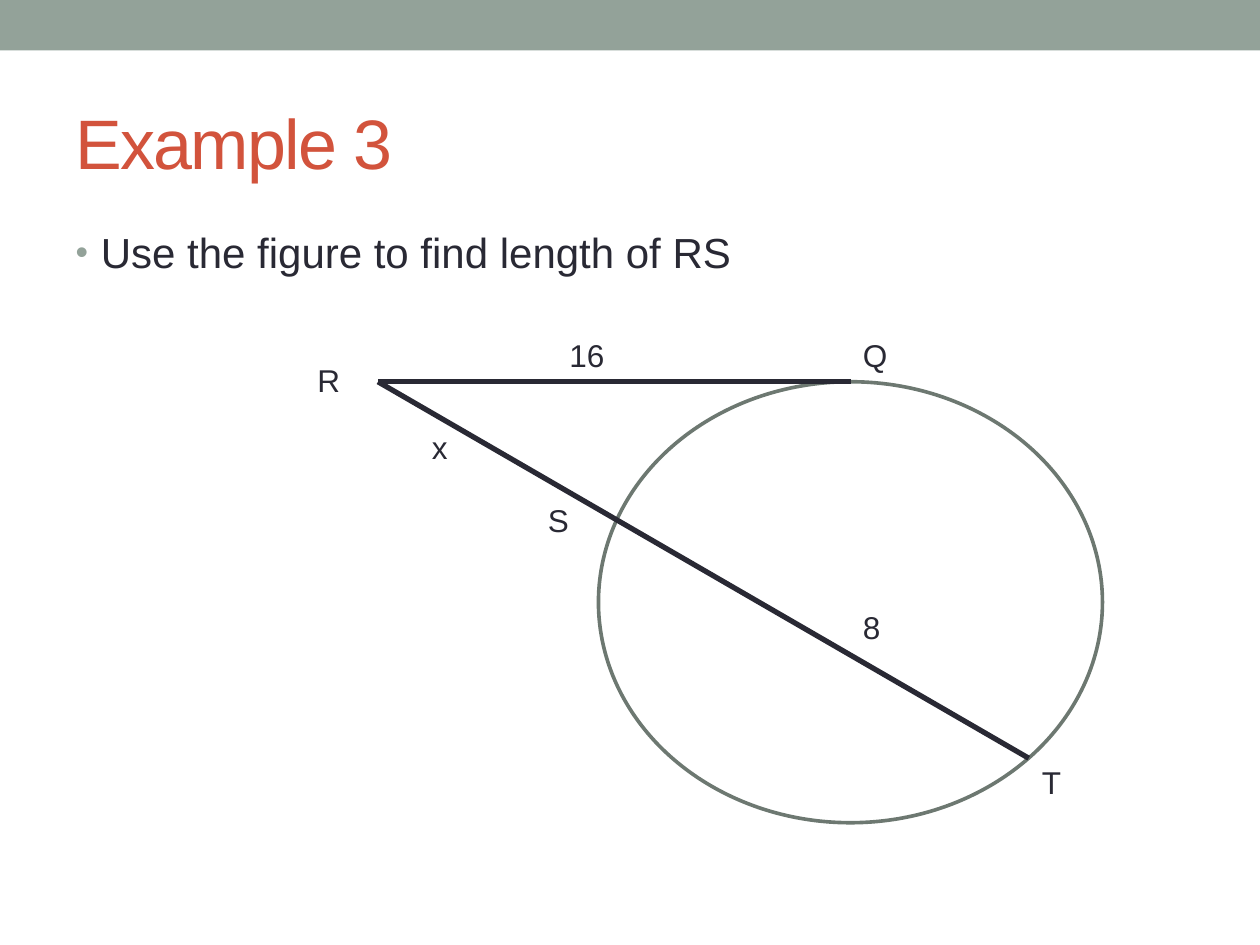
from math import cos, pi, sin

from lxml import etree
from pptx import Presentation
from pptx.dml.color import RGBColor
from pptx.enum.shapes import MSO_CONNECTOR, MSO_SHAPE
from pptx.enum.text import MSO_ANCHOR, MSO_AUTO_SIZE, PP_ALIGN
from pptx.oxml.ns import qn
from pptx.util import Inches, Pt

RECT, OVAL = MSO_SHAPE.RECTANGLE, MSO_SHAPE.OVAL
STRAIGHT = MSO_CONNECTOR.STRAIGHT
MIDDLE, LEFT = MSO_ANCHOR.MIDDLE, PP_ALIGN.LEFT
FIXED, GROW = MSO_AUTO_SIZE.NONE, MSO_AUTO_SIZE.SHAPE_TO_FIT_TEXT
WIDE, HIGH = 10, 7.5
MARGIN = 0.05 * WIDE
SAGE, MOSS, RUST, INK = "93A299", "6D7871", "D2533C", "292934"

# Circle centre and radii, then the points on the lines
MID_X, MID_Y, RAD_X, RAD_Y = 6.75, 4.78, 2, 1.75
R = (3, MID_Y - RAD_Y)
Q = (MID_X, MID_Y - RAD_Y)
T = (MID_X + RAD_X * cos(pi / 4), MID_Y + RAD_Y * sin(pi / 4))

LABELS = [
    ("Q", 6.75, 2.62, 0.4),
    ("R", 2.42, 2.82, 0.38),
    ("S", 4.25, 3.93, 0.37),
    ("T", 8.17, 6.01, 0.36),
    ("16", 4.42, 2.62, 0.48),
    ("x", 3.33, 3.35, 0.33),
    ("8", 6.75, 4.78, 0.34),
]


def color(code):
    return RGBColor.from_string(code)


def place(item, left, top, width, height):
    item.left, item.top = Inches(left), Inches(top)
    item.width, item.height = Inches(width), Inches(height)


def write(item, text, size, code):
    """Fill the item with one left-aligned line and return its paragraph."""
    item.text_frame.text = text
    para = item.text_frame.paragraphs[0]
    para.alignment = LEFT
    font = para.runs[0].font
    font.name, font.size = "Arial", Pt(size)
    font.color.rgb = color(code)
    return para


def add_form(slide, kind, box, fill=None, edge=None):
    form = slide.shapes.add_shape(kind, *map(Inches, box))
    form.shadow.inherit = False
    if fill:
        form.fill.solid()
        form.fill.fore_color.rgb = color(fill)
    else:
        form.fill.background()
    if edge:
        form.line.color.rgb = color(edge)
        form.line.width = Pt(2.08)
    else:
        form.line.fill.background()
    return form


def add_line(slide, start, end):
    line = slide.shapes.add_connector(STRAIGHT, *map(Inches, start + end))
    line.line.color.rgb = color(INK)
    line.line.width = Pt(3)
    etree.SubElement(line._element.spPr, qn("a:effectLst"))
    return line


def add_label(slide, text, left, top, width):
    box = slide.shapes.add_textbox(*map(Inches, (left, top, width, 0.4)))
    box.text_frame.word_wrap = False
    box.text_frame.auto_size = GROW
    write(box, text, 18, INK)


def set_title(title):
    place(title, MARGIN, 0.58, WIDE - 2 * MARGIN, 1.08)
    title.text_frame.vertical_anchor = MIDDLE
    title.text_frame.auto_size = FIXED
    para = write(title, "Example 3", 40, RUST)
    para.runs[0].font._element.set("spc", "-100")


def set_body(body):
    place(body, MARGIN, 1.75, WIDE - 2 * MARGIN, 5.33)
    body.text_frame.auto_size = FIXED
    para = write(body, "Use the figure to find length of RS", 24, INK)
    props = para._p.get_or_add_pPr()
    props.set("marL", str(Inches(0.2)))
    props.set("indent", str(Inches(-0.2)))
    tint = etree.SubElement(props, qn("a:buClr"))
    etree.SubElement(tint, qn("a:srgbClr"), val=SAGE)
    etree.SubElement(props, qn("a:buSzPct"), val="85000")
    etree.SubElement(props, qn("a:buFont"), typeface="Arial")
    etree.SubElement(props, qn("a:buChar"), char="•")


def main():
    deck = Presentation()
    deck.slide_width, deck.slide_height = Inches(WIDE), Inches(HIGH)
    slide = deck.slides.add_slide(deck.slide_layouts[1])
    set_title(slide.shapes.title)
    set_body(slide.placeholders[1])
    add_form(slide, RECT, (0, 0, WIDE, 0.4), fill=SAGE)
    box = (MID_X - RAD_X, MID_Y - RAD_Y, 2 * RAD_X, 2 * RAD_Y)
    circle = add_form(slide, OVAL, box, edge=MOSS)
    tangent = add_line(slide, Q, R)
    tangent.begin_connect(circle, 0)
    add_line(slide, R, T)
    for label in LABELS:
        add_label(slide, *label)
    deck.save("out.pptx")


if __name__ == "__main__":
    main()
